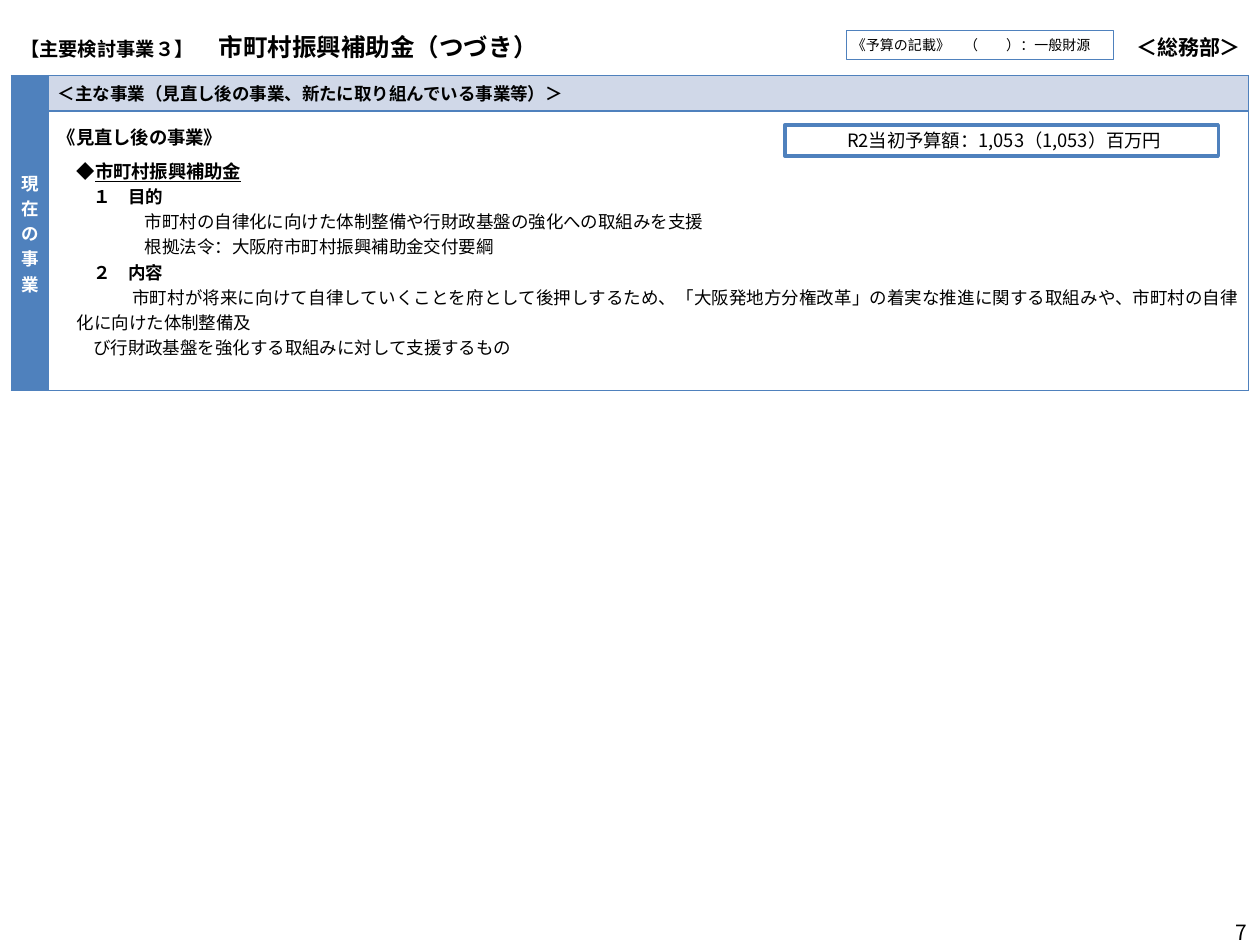
"""Build the slide on the municipal promotion subsidy."""
from lxml import etree
from pptx import Presentation
from pptx import util as u
from pptx.dml import color
from pptx.enum import shapes, text
from pptx.oxml import ns

FONT = "Noto Sans CJK JP"
BLUE, PALE, WHITE, BLACK = "4F81BD", "D0D8E8", "FFFFFF", "000000"
LEFT, CENTER, RIGHT, JUSTIFY = (
    text.PP_ALIGN.LEFT, text.PP_ALIGN.CENTER, text.PP_ALIGN.RIGHT, text.PP_ALIGN.JUSTIFY)
MIDDLE, TOP = text.MSO_ANCHOR.MIDDLE, text.MSO_ANCHOR.TOP
HEADING = {"size": 10.5, "bold": True}
ITEM = {"size": 10, "bold": True}
BODY = {"size": 10}

PROJECT_LINES = [
    ([("《見直し後の事業》", HEADING)], 0, 0, 0),
    ([("◆", HEADING), ("市町村振興補助金", {**HEADING, "underline": True})], 0.15, 0, 4),
    ([("１　目的", ITEM)], 0.28, 0, 0),
    ([("市町村の自律化に向けた体制整備や行財政基盤の強化への取組みを支援", BODY)], 0.69, 0, 0),
    ([("根拠法令：大阪府市町村振興補助金交付要綱", BODY)], 0.69, 0, 0),
    ([("２　内容", ITEM)], 0.28, 0, 0),
    ([("市町村が将来に向けて自律していくことを府として後押しするため、「大阪発地方分権改革」の"
       "着実な推進に関する取組みや、市町村の自律化に向けた体制整備及", BODY)], 0.15, 0.44, 0),
    ([("び行財政基盤を強化する取組みに対して支援するもの", BODY)], 0.28, 0, 0),
]


def rgb(value):
    """Turn a hex string into a colour."""
    return color.RGBColor.from_string(value)


def set_all(target, values):
    """Set every attribute named in a dict."""
    for name, value in values.items():
        setattr(target, name, value)


def write_para(para, spans, align, ink=BLACK):
    """Write formatted spans into a paragraph."""
    para.alignment = align
    for words, style in spans:
        span = para.add_run()
        span.text = words
        set_all(span.font, {**style, "size": u.Pt(style["size"]), "name": FONT})
        span.font.color.rgb = rgb(ink)
        east = etree.SubElement(span.font._element, ns.qn("a:ea"))
        east.set("typeface", FONT)


def indent_para(para, left, first, before):
    """Set the indents and the space above a paragraph."""
    para.space_before = u.Pt(before)
    properties = para._p.get_or_add_pPr()
    properties.set("marL", str(u.Inches(left)))
    properties.set("indent", str(u.Inches(first)))


def add_grid(page, left, top, widths, heights):
    """Add an unstyled table with given column widths and row heights."""
    frame = page.shapes.add_table(
        len(heights), len(widths), u.Inches(left), u.Inches(top),
        u.Inches(sum(widths)), u.Inches(sum(heights)))
    grid = frame.table
    set_all(grid, {"first_row": False, "horz_banding": False})
    for column, width in zip(grid.columns, widths):
        column.width = u.Inches(width)
    for row, height in zip(grid.rows, heights):
        row.height = u.Inches(height)
    return grid


def format_cell(cell, fill, anchor=MIDDLE, top=0.04):
    """Fill a cell and set its margins and anchor."""
    cell.fill.solid()
    cell.fill.fore_color.rgb = rgb(fill)
    set_all(cell, {
        "margin_left": u.Inches(0.08), "margin_right": u.Inches(0.08),
        "margin_top": u.Inches(top), "margin_bottom": u.Inches(0.04),
        "vertical_anchor": anchor})


def border_cell(cell, ink, points):
    """Draw the four borders of a cell."""
    properties = cell._tc.get_or_add_tcPr()
    for position, side in enumerate(("lnL", "lnR", "lnT", "lnB")):
        line = etree.Element(ns.qn(f"a:{side}"), w=str(u.Pt(points)))
        fill = etree.SubElement(line, ns.qn("a:solidFill"))
        etree.SubElement(fill, ns.qn("a:srgbClr"), val=ink)
        properties.insert(position, line)


def add_title(page):
    """Add the title row with the department name."""
    grid = add_grid(page, 0.08, 0.14, [7.78, 2.07], [0.45])
    titles = [
        ([("【主要検討事業３】", {"size": 11, "bold": True}),
          ("　市町村振興補助金（つづき）", {"size": 14, "bold": True})], JUSTIFY),
        ([("＜総務部＞", {"size": 12, "bold": True})], RIGHT),
    ]
    for cell, (spans, align) in zip(grid.iter_cells(), titles):
        format_cell(cell, WHITE)
        write_para(cell.text_frame.paragraphs[0], spans, align)


def add_projects(page):
    """Add the table of current projects."""
    grid = add_grid(page, 0.09, 0.6, [0.29, 9.53], [0.28, 2.22])
    side, header, body = grid.cell(0, 0), grid.cell(0, 1), grid.cell(1, 1)
    side.merge(grid.cell(1, 0))
    format_cell(side, BLUE)
    format_cell(header, PALE)
    format_cell(body, WHITE, TOP, 0.1)
    for cell in grid.iter_cells():
        border_cell(cell, BLUE, 1)
    side._tc.get_or_add_tcPr().set("vert", "eaVert")
    write_para(side.text_frame.paragraphs[0], [("現在の事業", ITEM)], CENTER, WHITE)
    write_para(header.text_frame.paragraphs[0],
               [("＜主な事業（見直し後の事業、新たに取り組んでいる事業等）＞", ITEM)], JUSTIFY)
    for number, (spans, left, first, before) in enumerate(PROJECT_LINES):
        frame = body.text_frame
        para = frame.add_paragraph() if number else frame.paragraphs[0]
        write_para(para, spans, JUSTIFY)
        indent_para(para, left, first, before)


def add_note(page, place, words, size, align, weight, right):
    """Add an outlined box with one line of text."""
    box = page.shapes.add_shape(
        shapes.MSO_SHAPE.RECTANGLE, *(u.Inches(value) for value in place))
    box.shadow.inherit = False
    box.fill.solid()
    box.fill.fore_color.rgb = rgb(WHITE)
    box.line.color.rgb = rgb(BLUE)
    box.line.width = u.Pt(weight)
    set_all(box.text_frame, {
        "word_wrap": True, "vertical_anchor": MIDDLE,
        "margin_left": u.Inches(0.04), "margin_right": u.Inches(right),
        "margin_top": u.Inches(0.05), "margin_bottom": u.Inches(0.05)})
    write_para(box.text_frame.paragraphs[0], [(words, {"size": size})], align)


def add_page_number(page, number):
    """Add the page number at the lower right."""
    box = page.shapes.add_textbox(
        u.Inches(7.67), u.Inches(7.2), u.Inches(2.33), u.Inches(0.4))
    set_all(box.text_frame, {"word_wrap": True, "vertical_anchor": MIDDLE})
    write_para(box.text_frame.paragraphs[0], [(number, {"size": 12})], RIGHT)


def main():
    """Build and save the deck."""
    deck = Presentation()
    set_all(deck, {"slide_width": u.Inches(10), "slide_height": u.Inches(7.5)})
    page = deck.slides.add_slide(deck.slide_layouts[6])
    add_title(page)
    add_projects(page)
    add_note(page, (6.23, 0.99, 3.44, 0.25),
             "R2当初予算額：1,053（1,053）百万円", 10.5, CENTER, 2, 0)
    add_note(page, (6.72, 0.24, 2.12, 0.23),
             "《予算の記載》　（　　）：一般財源", 8, LEFT, 0.5, 0.04)
    add_page_number(page, "7")
    deck.save("out.pptx")


if __name__ == "__main__":
    main()
